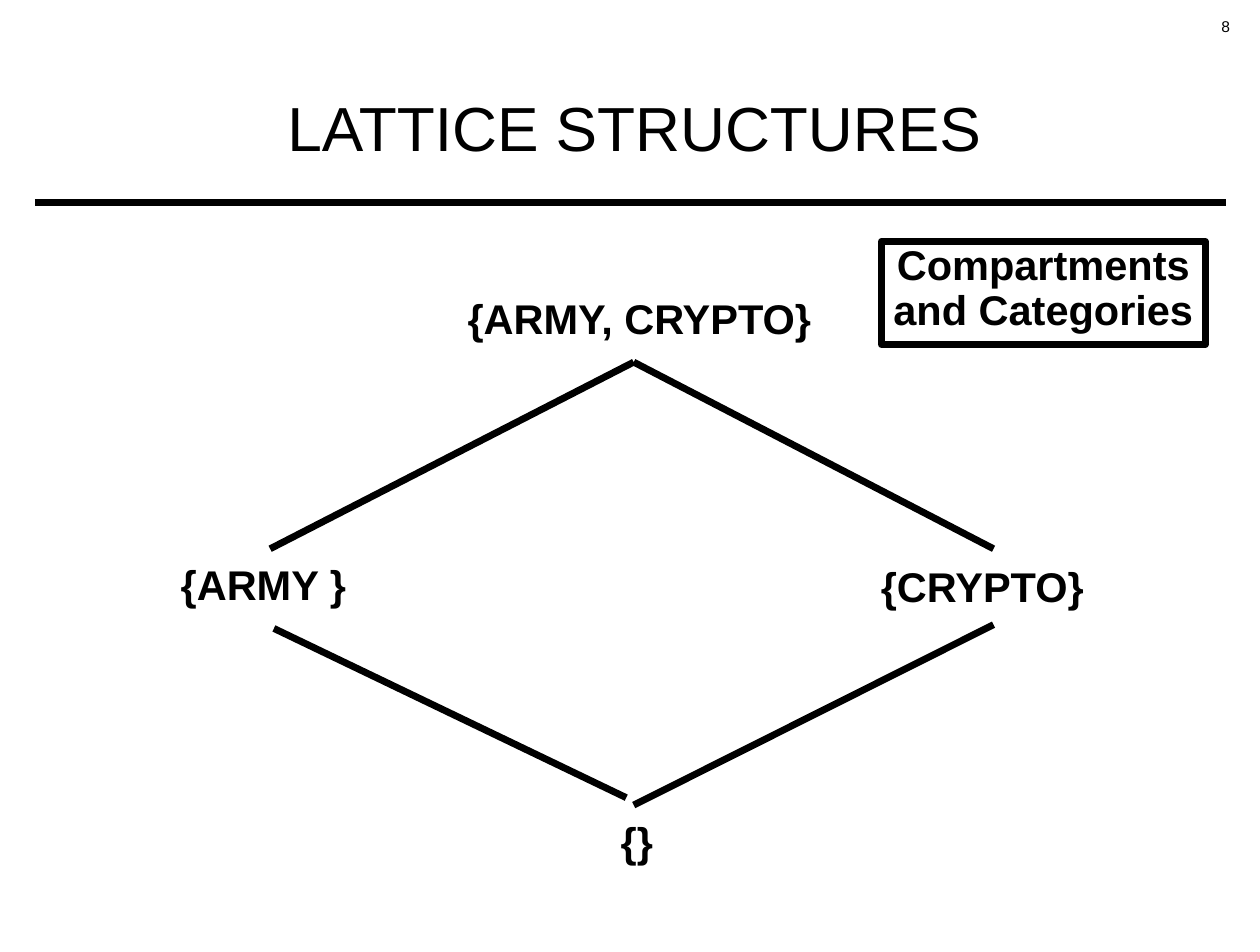
from dataclasses import dataclass

from pptx import Presentation
from pptx.dml.color import RGBColor
from pptx.enum.shapes import MSO_CONNECTOR, MSO_SHAPE
from pptx.enum.text import MSO_ANCHOR, PP_ALIGN
from pptx.oxml.ns import qn
from pptx.shapes.autoshape import Shape
from pptx.slide import Slide
from pptx.util import Inches, Pt
from lxml.etree import SubElement

BLACK = RGBColor(0, 0, 0)
FONT = "Arial"
LINE_WIDTH = Pt(4)


@dataclass(frozen=True)
class Label:
    text: str
    left: float
    top: float
    width: float
    height: float = 0.46
    size: int = 24
    bold: bool = True
    spacing: float = 0.87
    align: PP_ALIGN = PP_ALIGN.CENTER

    @property
    def bounds(self) -> list[Inches]:
        return [Inches(v) for v in (self.left, self.top, self.width, self.height)]


@dataclass(frozen=True)
class Edge:
    start: tuple[float, float]
    end: tuple[float, float]


PAGE_NUMBER = Label("8", 8.91, 0.06, 1.04, 0.25, 9, False, 1.3, PP_ALIGN.RIGHT)
TITLE = Label("LATTICE STRUCTURES", 2.22, 0.78, 5.75, 0.57, 36, False, 0.85)
CAPTION = Label("Compartments\nand Categories", 7.08, 1.94, 2.6, 0.83, spacing=0.9)
LATTICE_SETS = [
    Label("{ARMY, CRYPTO}", 3.63, 2.38, 3.01),
    Label("{ARMY }", 1.35, 4.52, 1.53),
    Label("{CRYPTO}", 6.97, 4.53, 1.84),
    Label("{}", 4.89, 6.58, 0.45),
]

TITLE_RULE = Edge((0.28, 1.63), (9.85, 1.63))
LATTICE_TOP = (5.09, 2.91)
LATTICE_EDGES = [
    Edge(LATTICE_TOP, (2.17, 4.41)),
    Edge((2.2, 5.05), (5.03, 6.41)),
    Edge((5.09, 6.47), (7.98, 5.02)),
    Edge(LATTICE_TOP, (7.98, 4.41)),
]


def write_label(box: Shape, label: Label) -> None:
    frame = box.text_frame
    frame.text = label.text
    frame.word_wrap = label.align == PP_ALIGN.RIGHT
    frame.vertical_anchor = MSO_ANCHOR.TOP
    frame.margin_left = frame.margin_right = Inches(0.07)
    frame.margin_top = frame.margin_bottom = Inches(0.03)
    for para in frame.paragraphs:
        para.alignment = label.align
        para.line_spacing = label.spacing
        for span in para.runs:
            span.font.name = FONT
            span.font.size = Pt(label.size)
            span.font.bold = label.bold
            span.font.color.rgb = BLACK


def add_label(page: Slide, label: Label) -> None:
    write_label(page.shapes.add_textbox(*label.bounds), label)


def add_framed_label(page: Slide, label: Label) -> None:
    box = page.shapes.add_shape(MSO_SHAPE.RECTANGLE, *label.bounds)
    box.shadow.inherit = False
    box.fill.background()
    box.line.color.rgb = BLACK
    box.line.width = LINE_WIDTH
    write_label(box, label)


def add_edge(page: Slide, edge: Edge) -> None:
    ends = [Inches(v) for v in edge.start + edge.end]
    line = page.shapes.add_connector(MSO_CONNECTOR.STRAIGHT, *ends)
    line.line.color.rgb = BLACK
    line.line.width = LINE_WIDTH
    SubElement(line._element.spPr, qn("a:effectLst"))


def main() -> None:
    deck = Presentation()
    deck.slide_width = Inches(10.12)
    deck.slide_height = Inches(7.65)
    page = deck.slides.add_slide(deck.slide_layouts[6])

    add_label(page, PAGE_NUMBER)
    add_edge(page, TITLE_RULE)
    add_label(page, TITLE)
    add_framed_label(page, CAPTION)
    for lattice_set in LATTICE_SETS:
        add_label(page, lattice_set)
    for edge in LATTICE_EDGES:
        add_edge(page, edge)

    deck.save("out.pptx")


if __name__ == "__main__":
    main()
